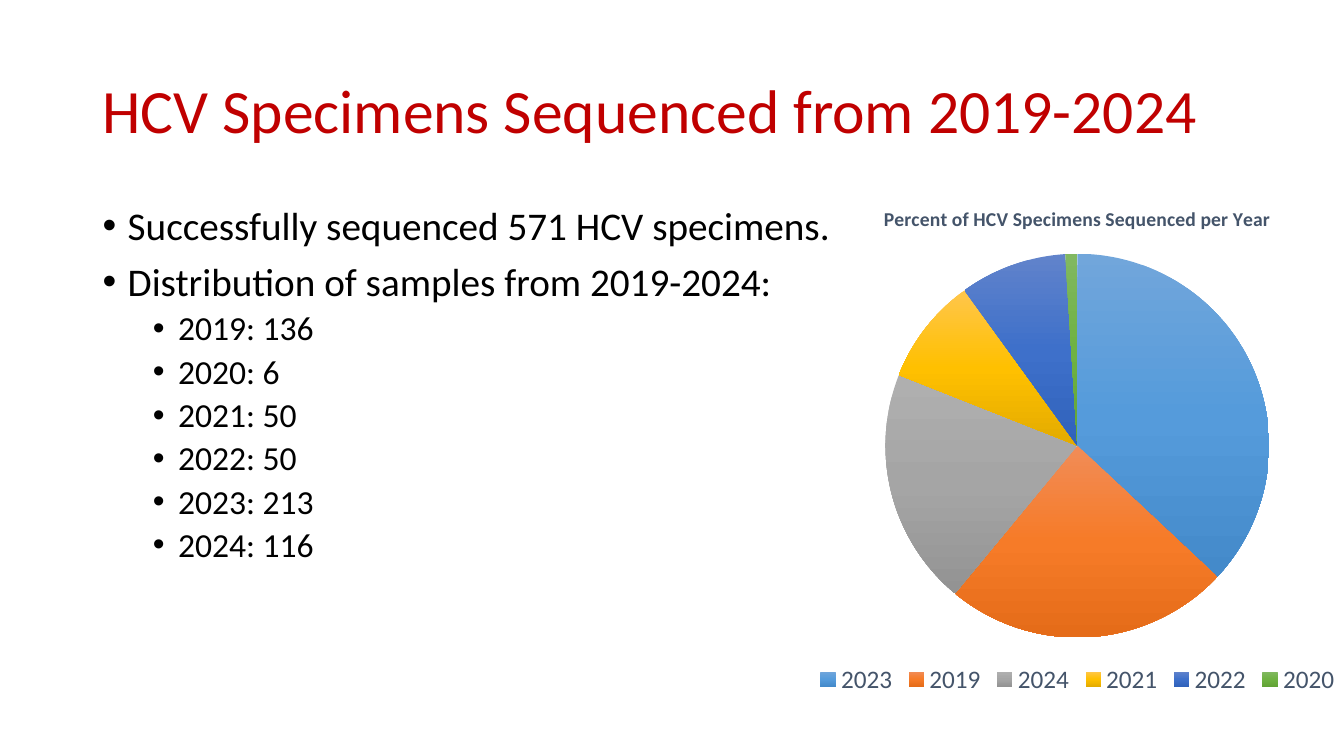
from lxml.etree import SubElement
from pptx import Presentation
from pptx.chart.data import CategoryChartData
from pptx.dml.color import RGBColor
from pptx.enum.chart import XL_CHART_TYPE, XL_LEGEND_POSITION
from pptx.enum.text import MSO_ANCHOR, MSO_AUTO_SIZE, PP_ALIGN
from pptx.oxml import parse_xml
from pptx.oxml.ns import nsdecls, qn
from pptx.util import Cm, Pt

FACE = "Calibri"
RED, BLACK, SLATE = "C00000", "000000", "44546A"
COUNTS = {"2019": 136, "2020": 6, "2021": 50, "2022": 50, "2023": 213, "2024": 116}
# Year: percent, then gradient from top to bottom
SHARES = {
    "2023": (37, ("71A6DB", "559BDB", "448ACA")),
    "2019": (24, ("F18C57", "F67B28", "E56C19")),
    "2024": (20, ("AFAFAF", "A5A5A5", "939393")),
    "2021": (9, ("FFC64B", "FFC000", "E3AB00")),
    "2022": (9, ("6183CB", "3E70CA", "3062BB")),
    "2020": (1, ("81B861", "6FB242", "62A336")),
}


def style(font, size, color, bold=False):
    font.name, font.size, font.bold = FACE, Pt(size), bold
    font.color.rgb = RGBColor.from_string(color)


def place(shape, box):
    shape.left, shape.top, shape.width, shape.height = box


def add_title(slide, box):
    title = slide.shapes.title
    place(title, box)
    frame = title.text_frame
    frame.text = "HCV Specimens Sequenced from 2019-2024"
    frame.vertical_anchor = MSO_ANCHOR.MIDDLE
    frame.auto_size = MSO_AUTO_SIZE.NONE
    line = frame.paragraphs[0]
    line.alignment, line.line_spacing = PP_ALIGN.LEFT, 0.9
    style(line.runs[0].font, 44, RED)


def add_list(slide, box):
    body = slide.placeholders[1]
    place(body, box)
    frame = body.text_frame
    heads = ["Successfully sequenced 571 HCV specimens.",
             "Distribution of samples from 2019-2024:"]
    years = [f"{year}: {count}" for year, count in COUNTS.items()]
    frame.text = "\n".join(heads + years)
    frame.auto_size = MSO_AUTO_SIZE.NONE
    for i, line in enumerate(frame.paragraphs):
        sub = i >= len(heads)
        line.level = int(sub)
        line.line_spacing = 0.9
        line.space_before = Pt(5 if sub else 10)
        style(line.runs[0].font, 24 if sub else 28, BLACK)
        # Bullet and hanging indent
        props = line._p.get_or_add_pPr()
        props.set("marL", str(Cm(1.905 if sub else 0.635)))
        props.set("indent", str(-Cm(0.635)))
        SubElement(props, qn("a:buFont")).set("typeface", "Arial")
        SubElement(props, qn("a:buChar")).set("char", "•")


def shade(point, colors):
    stops = "".join(
        f'<a:gs pos="{i * 50000}"><a:srgbClr val="{color}"/></a:gs>'
        for i, color in enumerate(colors))
    point.format.line.fill.background()
    point.format.line._ln.addprevious(parse_xml(
        f'<a:gradFill {nsdecls("a")} rotWithShape="1"><a:gsLst>{stops}</a:gsLst>'
        '<a:lin ang="5400000" scaled="0"/></a:gradFill>'))


def add_pie(slide, box):
    data = CategoryChartData()
    data.categories = list(SHARES)
    data.add_series("Series 1", [share for share, _ in SHARES.values()])
    chart = slide.shapes.add_chart(XL_CHART_TYPE.PIE, *box, data).chart
    style(chart.font, 10, BLACK)

    # Heading
    chart.has_title = True
    head = chart.chart_title.text_frame
    head.text = "Percent of HCV Specimens Sequenced per Year"
    style(head.paragraphs[0].runs[0].font, 14, SLATE, True)

    # Legend
    chart.has_legend = True
    chart.legend.position = XL_LEGEND_POSITION.BOTTOM
    chart.legend.include_in_layout = False
    style(chart.legend.font, 18, SLATE)

    # Slices
    plot = chart.plots[0]
    plot.vary_by_categories = True
    for i, (_, colors) in enumerate(SHARES.values()):
        shade(plot.series[0].points[i], colors)

    # Pie position as shares of the chart area
    area = chart._chartSpace.chart.plotArea
    for old in area.findall(qn("c:layout")):
        area.remove(old)
    parts = {"x": 0.16, "y": 0.13, "w": 0.68, "h": 0.75}
    sizes = "".join(f'<c:{key} val="{val}"/>' for key, val in parts.items())
    area.insert(0, parse_xml(
        f'<c:layout {nsdecls("c")}><c:manualLayout><c:layoutTarget val="inner"/>'
        f'<c:xMode val="edge"/><c:yMode val="edge"/>{sizes}'
        '</c:manualLayout></c:layout>'))


def main():
    deck = Presentation()
    deck.slide_width, deck.slide_height = Cm(33.87), Cm(19.05)
    slide = deck.slides.add_slide(deck.slide_layouts[1])
    add_title(slide, (Cm(2.33), Cm(1.01), Cm(29.21), Cm(3.68)))
    add_pie(slide, (Cm(20.04), Cm(4.7), Cm(14.22), Cm(12.93)))
    add_list(slide, (Cm(2.33), Cm(5.07), Cm(19.13), Cm(12.09)))
    deck.save("out.pptx")


if __name__ == "__main__":
    main()
